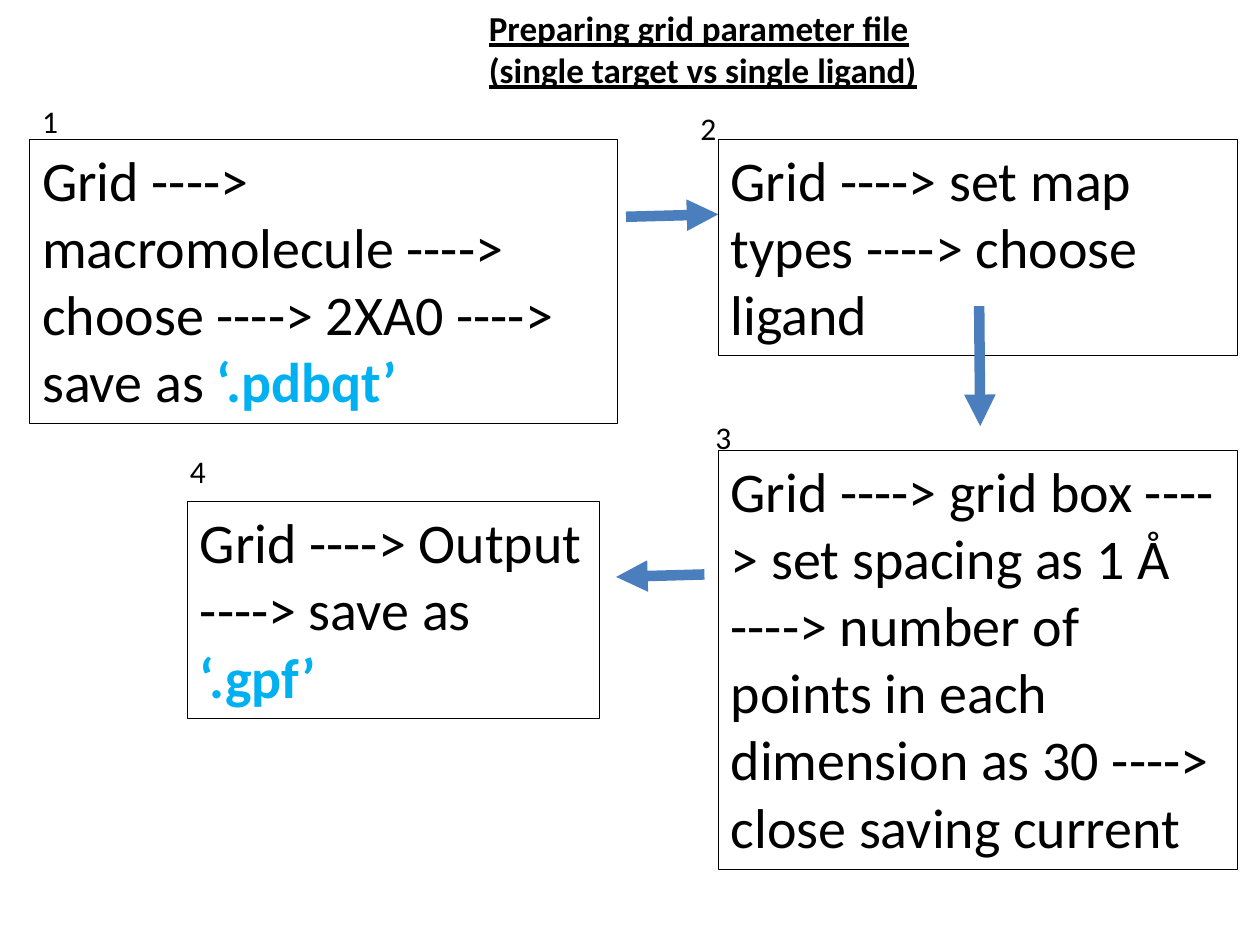
from lxml.etree import SubElement
from pptx import Presentation
from pptx.dml.color import RGBColor
from pptx.enum.shapes import MSO_CONNECTOR, MSO_SHAPE
from pptx.enum.text import MSO_ANCHOR as Anchor, MSO_AUTO_SIZE as AutoSize, PP_ALIGN as Align
from pptx.oxml.ns import qn
from pptx.util import Cm, Pt

COLORS = {"text": "000000", "extension": "00B0F0", "arrow": "4B7EBC"}
FONT = "Calibri"
TITLE = ["Preparing grid parameter file", "(single target vs single ligand)"]
TITLE_AREA = (9.6, 0, 15.8, 2.82)

STEPS = [
    {"text": "Grid ----> macromolecule ----> choose ----> 2XA0 ----> save as ",
     "extension": "‘.pdbqt’", "area": (0.6, 2.8, 11.84, 5.73), "number_at": (0.6, 1.93)},
    {"text": "Grid ----> set map types ----> choose ligand",
     "extension": "", "area": (14.48, 2.8, 10.46, 4.37), "number_at": (13.87, 2.08)},
    {"text": "Grid ----> grid box ----> set spacing as 1 Å ----> number of points "
             "in each dimension as 30 ----> close saving current",
     "extension": "", "area": (14.48, 9.07, 10.46, 8.46), "number_at": (14.17, 8.31)},
    {"text": "Grid ----> Output ----> save as ",
     "extension": "‘.gpf’", "area": (3.78, 10.11, 8.31, 4.37), "number_at": (3.58, 8.99)},
]
NUMBER_SIZE = (0.84, 1.02)
ARROWS = [
    (12.62, 4.37, 14.48, 4.32),
    (19.74, 6.17, 19.76, 8.59),
    (14.2, 11.58, 12.42, 11.63),
]


def color(name):
    return RGBColor.from_string(COLORS[name])


def lengths(values):
    return [Cm(value) for value in values]


def style(para, size, bold=False):
    para.alignment = Align.LEFT
    font = para.font
    font.name, font.size, font.bold = FONT, Pt(size), bold
    font.color.rgb = color("text")


def add_title(page):
    title = page.shapes.title
    title.left, title.top, title.width, title.height = lengths(TITLE_AREA)
    frame = title.text_frame
    frame.text = "\n".join(TITLE)
    frame.vertical_anchor = Anchor.TOP
    frame.auto_size = AutoSize.NONE
    for para in frame.paragraphs:
        style(para, 20, bold=True)
        para.font.underline = True


def add_step(page, step):
    box = page.shapes.add_shape(MSO_SHAPE.RECTANGLE, *lengths(step["area"]))
    box.shadow.inherit = False
    box.fill.background()
    box.line.color.rgb = color("text")
    box.line.width = Pt(0.25)
    frame = box.text_frame
    frame.word_wrap = True
    frame.vertical_anchor = Anchor.TOP
    para = frame.paragraphs[0]
    style(para, 32)
    para.add_run().text = step["text"]
    if step["extension"]:
        span = para.add_run()
        span.text = step["extension"]
        span.font.bold = True
        span.font.color.rgb = color("extension")


def add_number(page, number, position):
    box = page.shapes.add_textbox(*lengths(position + NUMBER_SIZE))
    frame = box.text_frame
    frame.word_wrap = False
    frame.auto_size = AutoSize.SHAPE_TO_FIT_TEXT
    frame.text = str(number)
    style(frame.paragraphs[0], 18)


def add_arrow(page, ends):
    arrow = page.shapes.add_connector(MSO_CONNECTOR.STRAIGHT, *lengths(ends))
    arrow.line.color.rgb = color("arrow")
    arrow.line.width = Pt(6)
    SubElement(arrow.line._get_or_add_ln(), qn("a:tailEnd"), type="triangle")
    SubElement(arrow._element.spPr, qn("a:effectLst"))


def main():
    """Build the slide on preparing a grid parameter file."""
    deck = Presentation()
    deck.slide_width, deck.slide_height = Cm(25.4), Cm(19.05)
    page = deck.slides.add_slide(deck.slide_layouts[5])
    add_title(page)
    for step in STEPS:
        add_step(page, step)
    for ends in ARROWS:
        add_arrow(page, ends)
    for number, step in enumerate(STEPS, 1):
        add_number(page, number, step["number_at"])
    deck.save("out.pptx")


if __name__ == "__main__":
    main()
